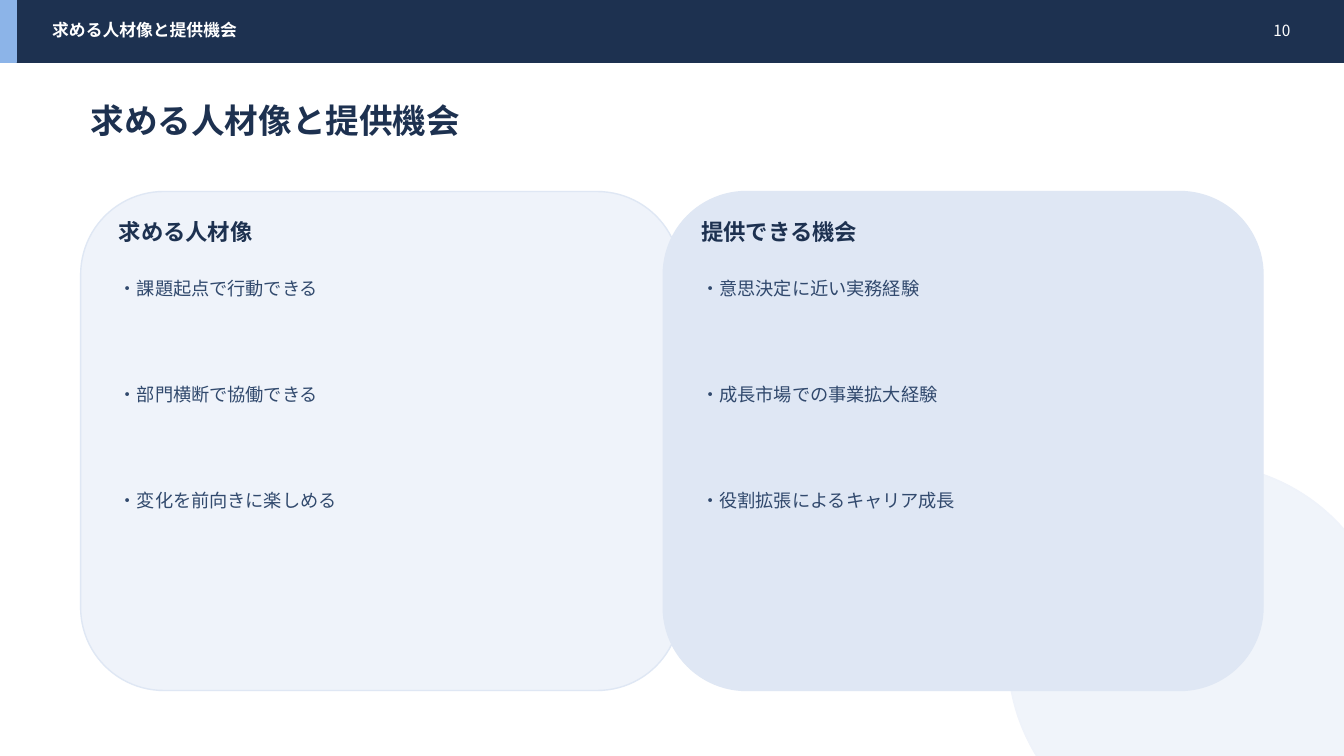
from lxml.etree import SubElement
from pptx import Presentation
from pptx.dml.color import RGBColor
from pptx.enum.shapes import MSO_SHAPE as Preset
from pptx.enum.text import MSO_ANCHOR as Anchor, PP_ALIGN as Align
from pptx.oxml.ns import qn
from pptx.util import Pt

NAVY, SLATE, SKY = "1D3150", "31496D", "8CB4E8"
PALE, MIST, WHITE = "EFF3FA", "DFE7F4", "FFFFFF"
SANS, SERIF = "Noto Sans CJK JP", "Times New Roman"

TITLE = "求める人材像と提供機会"
PANELS = [
    ("求める人材像", PALE,
     ["・課題起点で行動できる", "・部門横断で協働できる", "・変化を前向きに楽しめる"]),
    ("提供できる機会", MIST,
     ["・意思決定に近い実務経験", "・成長市場での事業拡大経験", "・役割拡張によるキャリア成長"]),
]
PANEL_LEFT, PANEL_STEP, PANEL_INDENT = 57.6, 416.16, 20.16
POINT_TOP, POINT_STEP = 194.4, 75.6


def color(code):
    return RGBColor.from_string(code)


class SlideBuilder:
    def __init__(self, slide):
        self.slide = slide

    def shape(self, preset, box, fill, line=None, opacity=None):
        """Draw a filled preset shape; opacity is in percent."""
        item = self.slide.shapes.add_shape(preset, *map(Pt, box))
        item.shadow.inherit = False
        item.fill.solid()
        item.fill.fore_color.rgb = color(fill)
        item.line.color.rgb = color(line or fill)
        item.line.width = Pt(1)
        if opacity is not None:
            tint = item._element.spPr.find(qn("a:solidFill")).find(qn("a:srgbClr"))
            SubElement(tint, qn("a:alpha"), val=str(opacity * 1000))

    def text(self, box, words, size, ink, bold=False, face=SANS,
             anchor=Anchor.MIDDLE, align=Align.LEFT):
        frame = self.slide.shapes.add_textbox(*map(Pt, box)).text_frame
        frame.word_wrap = True
        frame.vertical_anchor = anchor
        paragraph = frame.paragraphs[0]
        paragraph.alignment = align
        run = paragraph.add_run()
        run.text = words
        for name, value in {"size": Pt(size), "bold": bold, "name": face}.items():
            setattr(run.font, name, value)
        run.font.color.rgb = color(ink)
        SubElement(run._r.get_or_add_rPr(), qn("a:ea"), typeface=SANS)


def main():
    deck = Presentation()
    deck.slide_width, deck.slide_height = Pt(960), Pt(540)
    page = SlideBuilder(deck.slides.add_slide(deck.slide_layouts[6]))

    page.shape(Preset.OVAL, (720, 331.2, 273.6, 273.6), PALE, opacity=88)
    page.shape(Preset.RECTANGLE, (0, 0, 960, 44.64), NAVY)
    page.shape(Preset.RECTANGLE, (0, 0, 11.52, 44.64), SKY)
    page.text((30.24, 12.24, 633.6, 18.72), TITLE, 12, WHITE, bold=True)
    page.text((874.8, 12.24, 54, 18.72), "10", 11, WHITE, align=Align.RIGHT)
    page.text((57.6, 68.4, 820.8, 34.56), TITLE, 24, NAVY, bold=True, face=SERIF)

    for column, (heading, fill, points) in enumerate(PANELS):
        left = PANEL_LEFT + column * PANEL_STEP
        inner = left + PANEL_INDENT
        page.shape(Preset.ROUNDED_RECTANGLE, (left, 136.8, 428.4, 356.4), fill, MIST)
        page.text((inner, 154.8, 374.4, 21.6), heading, 16, NAVY, bold=True)
        for row, point in enumerate(points):
            page.text((inner, POINT_TOP + row * POINT_STEP, 378, 59.04),
                      point, 13, SLATE, anchor=Anchor.TOP)

    deck.save("out.pptx")


if __name__ == "__main__":
    main()
